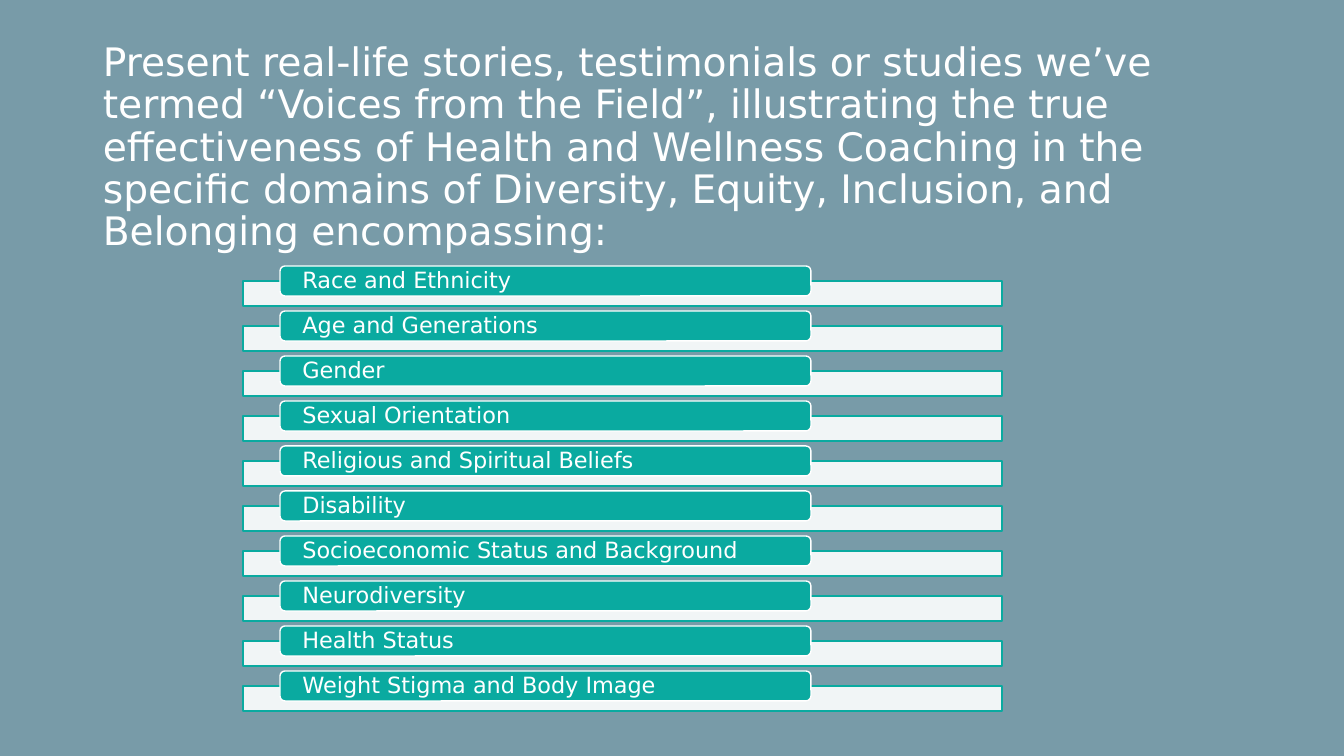
from lxml import etree
from pptx import Presentation
from pptx import util as u
from pptx.dml.color import RGBColor
from pptx.enum import shapes, text
from pptx.oxml.ns import qn

TITLE = (
    "Present real-life stories, testimonials or studies we’ve termed “Voices from the Field”, "
    "illustrating the true effectiveness of Health and Wellness Coaching in the specific domains "
    "of Diversity, Equity, Inclusion, and Belonging encompassing:"
)
TOPICS = [
    "Race and Ethnicity",
    "Age and Generations",
    "Gender",
    "Sexual Orientation",
    "Religious and Spiritual Beliefs",
    "Disability",
    "Socioeconomic Status and Background",
    "Neurodiversity",
    "Health Status",
    "Weight Stigma and Body Image",
]
TOP = 266
STEP = 45


class Deck:
    font = "DejaVu Sans"
    colors = {"back": "789BA8", "teal": "0AAAA0", "white": "FFFFFF"}

    def __init__(self, wide, high):
        self.prs = Presentation()
        self.prs.slide_width = self.px(wide)
        self.prs.slide_height = self.px(high)
        self.slide = self.prs.slides.add_slide(self.prs.slide_layouts[6])
        self.paint(self.slide.background.fill, "back")

    def px(self, num):
        return u.Emu(round(num * 914400 / 100.8))

    def paint(self, fill, name):
        fill.solid()
        fill.fore_color.rgb = RGBColor.from_string(self.colors[name])

    def label(self, frame, words, size):
        frame.text = words
        frame.word_wrap = True
        frame.vertical_anchor = text.MSO_ANCHOR.MIDDLE
        para = frame.paragraphs[0]
        para.alignment = text.PP_ALIGN.LEFT
        para.line_spacing = 0.9
        font = para.runs[0].font
        font.name = self.font
        font.size = u.Pt(size)
        font.color.rgb = RGBColor.from_string(self.colors["white"])

    def title(self, words, *box):
        item = self.slide.shapes.add_textbox(*map(self.px, box))
        self.label(item.text_frame, words, 28)

    def shape(self, kind, fill, line, box):
        item = self.slide.shapes.add_shape(kind, *map(self.px, box))
        item.shadow.inherit = False
        self.paint(item.fill, fill)
        self.paint(item.line.fill, line)
        item.line.width = u.Pt(1)
        return item

    def bar(self, *box):
        item = self.shape(shapes.MSO_SHAPE.RECTANGLE, "white", "teal", box)
        color = item.element.spPr.find(qn("a:solidFill"))[0]
        etree.SubElement(color, qn("a:alpha"), val="90000")

    def pill(self, words, *box):
        item = self.shape(shapes.MSO_SHAPE.ROUNDED_RECTANGLE, "teal", "white", box)
        frame = item.text_frame
        frame.margin_left = frame.margin_right = self.px(21)
        frame.margin_top = frame.margin_bottom = 0
        self.label(frame, words, 16)


def main():
    deck = Deck(1344, 756)
    deck.title(TITLE, 93, 40, 1159, 217)
    for row, topic in enumerate(TOPICS):
        top = TOP + row * STEP
        deck.bar(243, top + 15, 759, 25)
        deck.pill(topic, 280, top, 531, 30)
    deck.prs.save("out.pptx")


if __name__ == "__main__":
    main()
